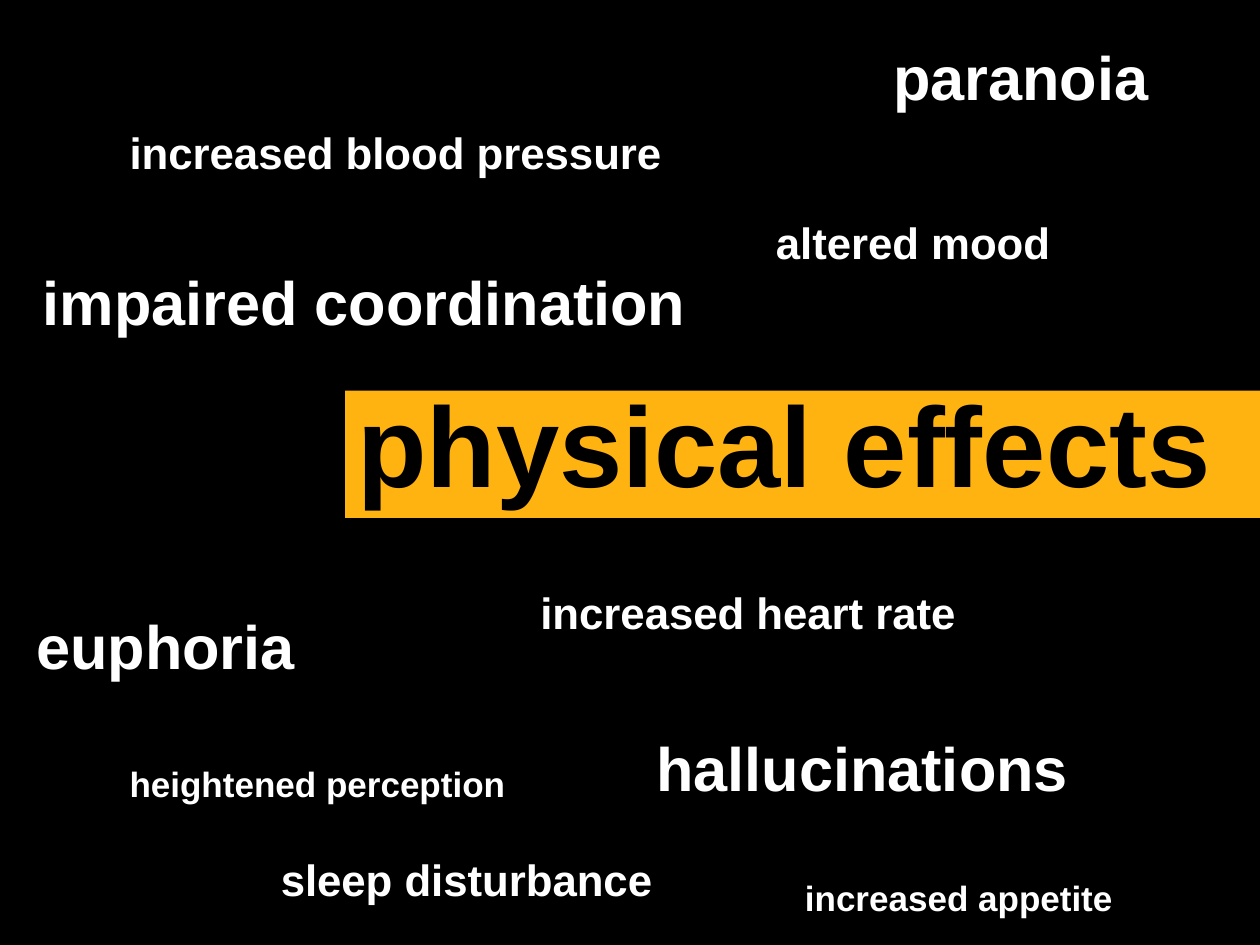
import pptx
import pptx.util
import pptx.dml.color
import pptx.enum.shapes
import pptx.enum.text

Inches = pptx.util.Inches
Pt = pptx.util.Pt
RECT = pptx.enum.shapes.MSO_SHAPE.RECTANGLE


def paint(fill, color):
    fill.solid()
    fill.fore_color.rgb = pptx.dml.color.RGBColor.from_string(color)


def write(shape, text, size, color):
    frame = shape.text_frame
    frame.word_wrap = True
    frame.auto_size = pptx.enum.text.MSO_AUTO_SIZE.SHAPE_TO_FIT_TEXT
    frame.vertical_anchor = pptx.enum.text.MSO_ANCHOR.TOP
    frame.text = text
    line = frame.paragraphs[0]
    line.alignment = pptx.enum.text.PP_ALIGN.LEFT
    font = line.runs[0].font
    font.name = "Arial"
    font.size = Pt(size)
    font.bold = True
    paint(font.fill, color)


deck = pptx.Presentation()
deck.slide_width = Inches(10)
deck.slide_height = Inches(7.5)
slide = deck.slides.add_slide(deck.slide_layouts[6])
paint(slide.background.fill, "000000")

blocks = []
for left, top, width, height, color in [
    (0, 0, 10, 7.5, "000000"),
    (2.74, 3.1, 7.26, 1.01, "FFB310"),
]:
    block = slide.shapes.add_shape(
        RECT, Inches(left), Inches(top), Inches(width), Inches(height))
    block.shadow.inherit = False
    block.line.fill.background()
    paint(block.fill, color)
    blocks.append(block)

banner = blocks[1]
write(banner, "physical effects", 65, "000000")
banner.text_frame.paragraphs[0].line_spacing = Pt(65)

effects = [
    ("altered mood", 6.06, 1.66, 5.1, 25),
    ("euphoria", 0.19, 4.78, 6.02, 35),
    ("sleep disturbance", 2.13, 6.72, 3.25, 25),
    ("increased heart rate", 4.19, 4.6, 5.1, 25),
    ("impaired coordination", 0.24, 2.05, 6.31, 35),
    ("paranoia", 6.99, 0.26, 6.02, 35),
    ("hallucinations", 5.11, 5.75, 6.31, 35),
    ("increased blood pressure", 0.93, 0.95, 5.1, 25),
    ("increased appetite", 6.29, 6.91, 5.13, 20),
    ("heightened perception", 0.93, 6, 5.13, 20),
]
heights = {20: 0.44, 25: 0.52, 35: 0.69}
for text, left, top, width, size in effects:
    box = slide.shapes.add_textbox(
        Inches(left), Inches(top), Inches(width), Inches(heights[size]))
    write(box, text, size, "FFFFFF")

deck.save("out.pptx")
